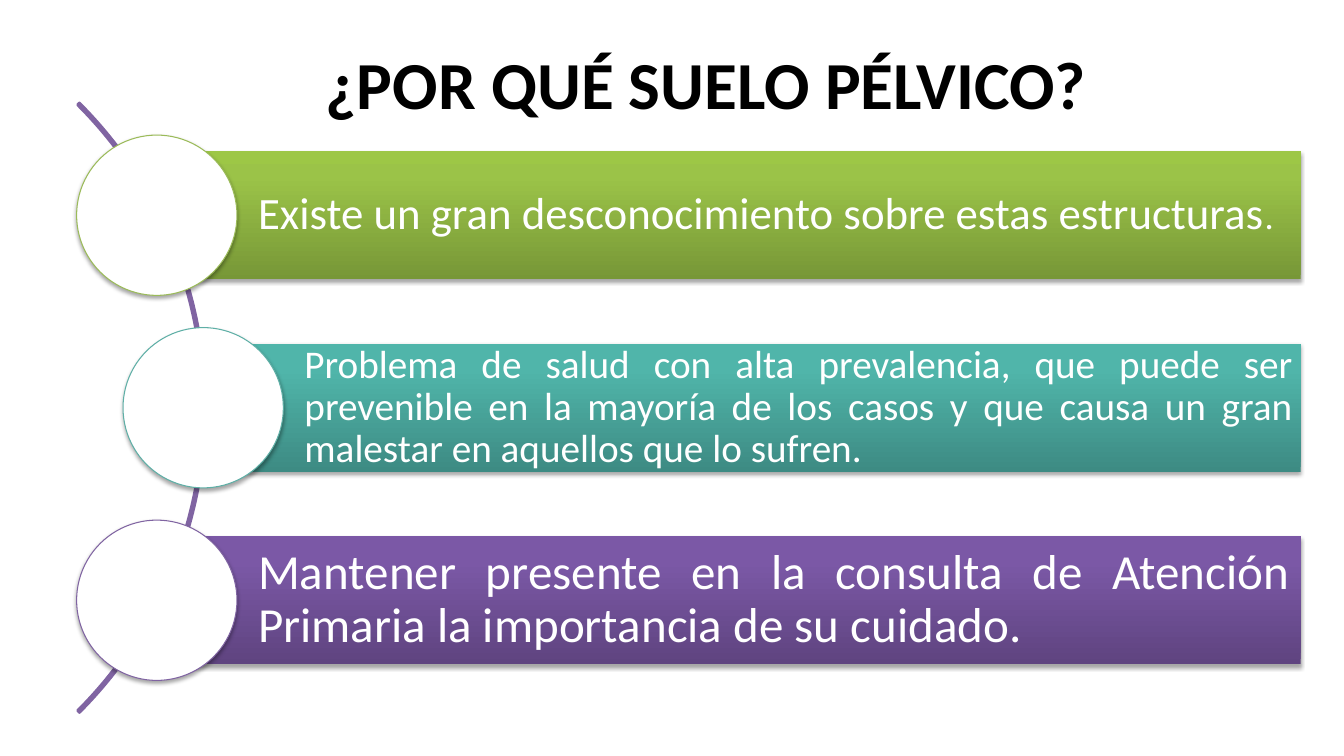
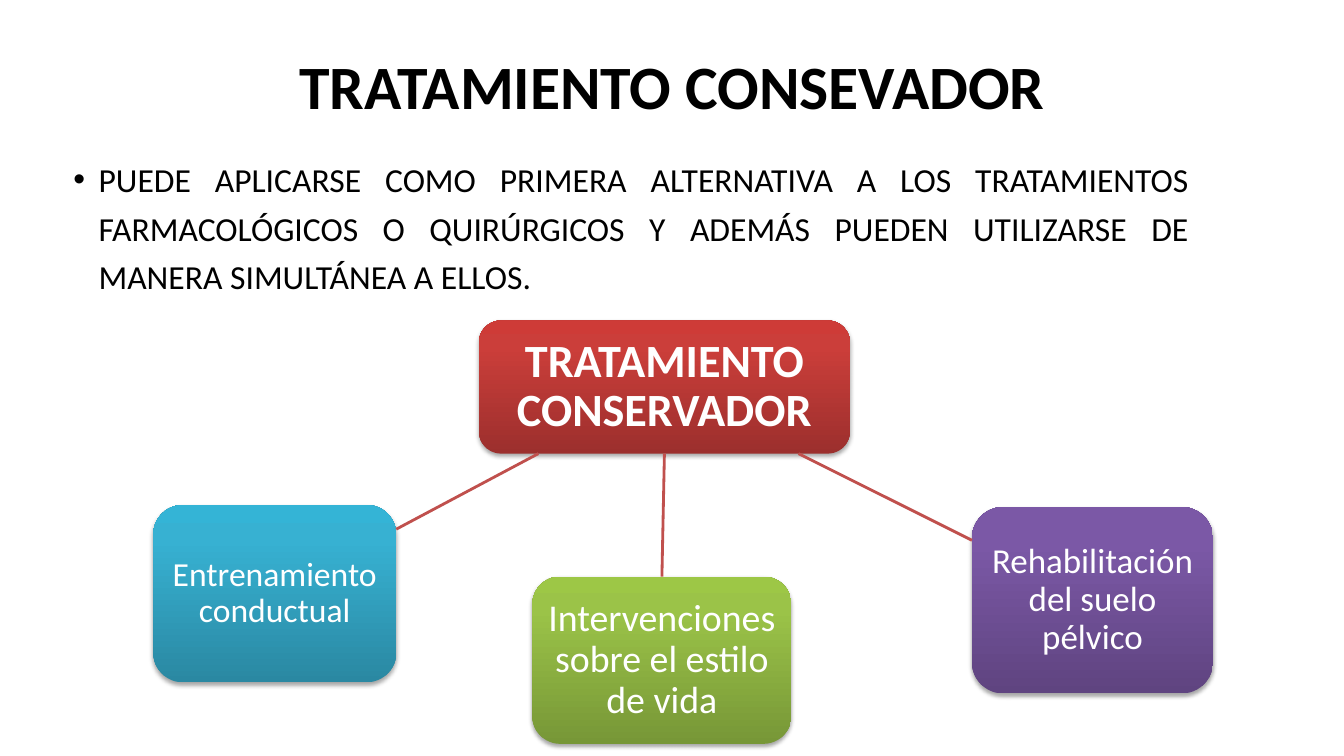
from lxml.etree import SubElement
from pptx import Presentation
from pptx.dml.color import RGBColor
from pptx.enum.shapes import MSO_CONNECTOR, MSO_SHAPE
from pptx.enum.text import MSO_ANCHOR, PP_ALIGN
from pptx.oxml.ns import qn
from pptx.util import Pt

PX = 9144
FONT = "Calibri"
COLORS = {
    "black": "000000",
    "white": "FFFFFF",
    "arc": "8064A2",
    "branch": "C0504D",
    "green_edge": "9BBB59",
    "teal_edge": "5EAFA6",
    "purple_edge": "8064A2",
}
GRADIENTS = {
    "green": ("779737", "9BC348", "9DC746"),
    "teal": ("3D8B83", "50B5AA", "4EB8AC"),
    "purple": ("5F4480", "7B58A6", "7C57A8"),
    "red": ("9C2F2D", "CB3E3A", "CE3B37"),
    "blue": ("2A88A2", "37B1D2", "34B4D6"),
}
STOPS = (0, 80000, 100000)

BAR_RIGHT, BAR_HEIGHT, FIRST_BAR_TOP, BAR_STEP = 1290, 127, 150, 191
CIRCLE = 159
BARS = [
    ("green", 76, 9, [("Existe un gran desconocimiento sobre estas estructuras", 32), (".", 26)]),
    ("teal", 122, 8, [("Problema de salud con alta prevalencia, que puede ser prevenible en la "
                       "mayoría de los casos y que causa un gran malestar en aquellos que lo "
                       "sufren.", 28)]),
    ("purple", 76, 10, [("Mantener presente en la consulta de Atención Primaria la importancia "
                         "de su cuidado.", 35)]),
]


def rgb(name):
    return RGBColor.from_string(COLORS[name])


def emu(*lengths):
    return [n * PX for n in lengths]


def add_text(tf, runs, color, align, spacing=1.0, bold=False, bullet_indent=0):
    tf.word_wrap = True
    p = tf.paragraphs[0]
    p.alignment = align
    p.line_spacing = spacing
    if bullet_indent:
        pPr = p._p.get_or_add_pPr()
        pPr.set("marL", str(bullet_indent * PX))
        pPr.set("indent", str(-bullet_indent * PX))
        SubElement(pPr, qn("a:buFont"), typeface="Arial")
        SubElement(pPr, qn("a:buChar"), char="•")
    for text, size in runs:
        r = p.add_run()
        r.text = text
        r.font.name = FONT
        r.font.size = Pt(size)
        r.font.bold = bold
        r.font.color.rgb = rgb(color)


def add_title(s, box, text, size, spacing=1.0):
    tf = s.shapes.add_textbox(*emu(*box)).text_frame
    tf.vertical_anchor = MSO_ANCHOR.MIDDLE
    add_text(tf, [(text, size)], "black", PP_ALIGN.CENTER, spacing, bold=True)


def add_shadow(sp):
    sp.shadow.inherit = False
    effects = sp._element.spPr.find(qn("a:effectLst"))
    shadow = SubElement(effects, qn("a:outerShdw"), blurRad=str(Pt(3.1)), dist=str(Pt(1.8)),
                        dir="5400000", rotWithShape="0")
    color = SubElement(shadow, qn("a:srgbClr"), val=COLORS["black"])
    SubElement(color, qn("a:alpha"), val="35000")


def add_gradient_box(s, kind, box, gradient, insets):
    sp = s.shapes.add_shape(kind, *emu(*box))
    sp.fill.gradient()
    sp.fill.gradient_angle = 90
    stops = sp._element.spPr.find(qn("a:gradFill")).find(qn("a:gsLst"))
    stops.clear()
    for pos, value in zip(STOPS, GRADIENTS[gradient]):
        stop = SubElement(stops, qn("a:gs"), pos=str(pos))
        SubElement(stop, qn("a:srgbClr"), val=value)
    sp.line.fill.background()
    add_shadow(sp)
    tf = sp.text_frame
    tf.vertical_anchor = MSO_ANCHOR.MIDDLE
    tf.margin_left, tf.margin_top, tf.margin_right, tf.margin_bottom = emu(*insets)
    return sp


def add_arc(s):
    sp = s.shapes.add_shape(MSO_SHAPE.BLOCK_ARC, *emu(-651, -23, 855, 855))
    for i, value in enumerate((189, 27, 0.003)):
        sp.adjustments[i] = value
    sp.fill.background()
    sp.line.color.rgb = rgb("arc")
    sp.line.width = Pt(2)
    sp.shadow.inherit = False


def add_bar(s, row, gradient, circle_left, inset, runs):
    top = FIRST_BAR_TOP + row * BAR_STEP
    left = circle_left + CIRCLE // 2
    bar = add_gradient_box(s, MSO_SHAPE.RECTANGLE, (left, top, BAR_RIGHT - left, BAR_HEIGHT),
                           gradient, (101, inset, inset, inset))
    add_text(bar.text_frame, runs, "white", PP_ALIGN.JUSTIFY, 0.9)
    circle_top = top - (CIRCLE - BAR_HEIGHT) // 2
    circle = s.shapes.add_shape(MSO_SHAPE.OVAL, *emu(circle_left, circle_top, CIRCLE, CIRCLE))
    circle.fill.solid()
    circle.fill.fore_color.rgb = rgb("white")
    circle.line.color.rgb = rgb(gradient + "_edge")
    circle.line.width = Pt(0.75)
    add_shadow(circle)


def add_node(s, box, gradient, text, size, inset=7, bold=False):
    sp = add_gradient_box(s, MSO_SHAPE.ROUNDED_RECTANGLE, box, gradient, (inset,) * 4)
    add_text(sp.text_frame, [(text, size)], "white", PP_ALIGN.CENTER, 0.9, bold)
    return sp


def add_branch(s, x1, y1, x2, y2):
    line = s.shapes.add_connector(MSO_CONNECTOR.STRAIGHT, *emu(x1, y1, x2, y2))
    line.line.color.rgb = rgb("branch")
    line.line.width = Pt(2)
    SubElement(line._element.spPr, qn("a:effectLst"))
    return line


def build_reasons(s):
    add_title(s, (295, 12, 811, 150), "¿POR QUÉ SUELO PÉLVICO?", 48, 0.9)
    add_arc(s)
    for row, bar in enumerate(BARS):
        add_bar(s, row, *bar)


def build_treatment(s):
    add_title(s, (67, 22, 1200, 125), "TRATAMIENTO CONSEVADOR", 44)
    tf = s.shapes.add_textbox(*emu(63, 145, 1126, 149)).text_frame
    add_text(tf, [("PUEDE APLICARSE COMO PRIMERA ALTERNATIVA A LOS TRATAMIENTOS FARMACOLÓGICOS "
                   "O QUIRÚRGICOS Y ADEMÁS PUEDEN UTILIZARSE DE MANERA SIMULTÁNEA A ELLOS.", 24)],
             "black", PP_ALIGN.JUSTIFY, 1.2, bullet_indent=25)
    root = add_node(s, (475, 318, 368, 132), "red", "TRATAMIENTO CONSERVADOR", 33, 9, True)
    lifestyle = add_node(s, (528, 572, 257, 166), "green",
                         "Intervenciones sobre el estilo de vida", 27)
    add_node(s, (964, 503, 239, 185), "purple", "Rehabilitación del suelo pélvico", 25)
    add_node(s, (152, 501, 241, 176), "blue", "Entrenamiento conductual", 24)
    middle = add_branch(s, 659, 450, 657, 572)
    middle.begin_connect(root, 2)
    middle.end_connect(lifestyle, 0)
    add_branch(s, 792, 450, 964, 536)
    add_branch(s, 534, 450, 393, 525)


def main():
    prs = Presentation()
    prs.slide_width, prs.slide_height = emu(1333, 750)
    for build in (build_reasons, build_treatment):
        build(prs.slides.add_slide(prs.slide_layouts[6]))
    prs.save("out.pptx")


if __name__ == "__main__":
    main()
